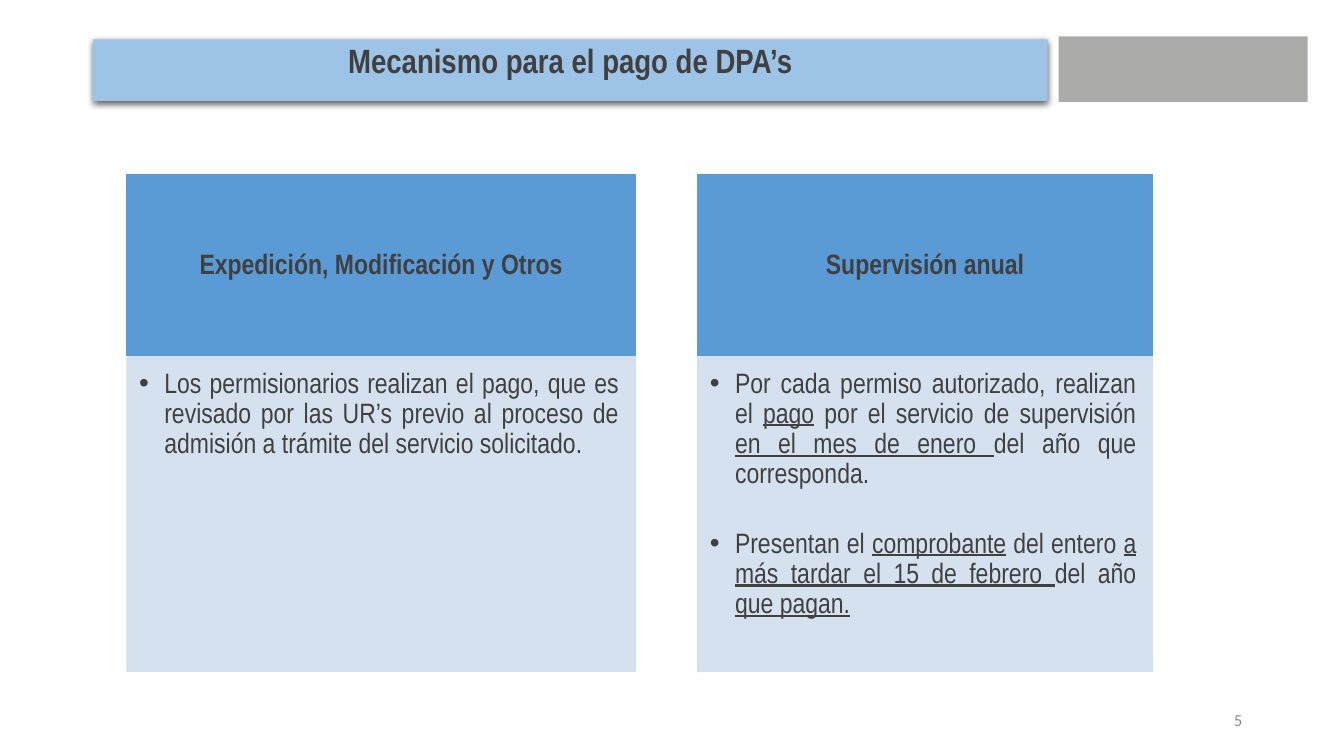
from lxml.etree import SubElement
from pptx import Presentation
from pptx.dml.color import RGBColor
from pptx.enum.shapes import MSO_SHAPE
from pptx.enum.text import MSO_ANCHOR, MSO_AUTO_SIZE, PP_ALIGN
from pptx.oxml.ns import qn
from pptx.util import Inches, Pt

COLORS = {
    "text": "404040", "number": "8C8C8C", "banner": "9DC3E6",
    "header": "5B9BD5", "panel": "D2DEEF", "logo": "AAAAA9",
}
COLUMNS = [
    (1.26, 5.04, "Expedición, Modificación y Otros", [
        "Los permisionarios realizan el pago, que es revisado por las UR’s "
        "previo al proceso de admisión a trámite del servicio solicitado.",
    ]),
    (6.92, 4.51, "Supervisión anual", [
        "Por cada permiso autorizado, realizan el _pago_ por el servicio de "
        "supervisión _en el mes de enero _del año que corresponda.",
        "Presentan el _comprobante_ del entero _a más tardar el 15 de febrero "
        "_del año _que pagan._",
    ]),
]


def rgb(name):
    return RGBColor.from_string(COLORS[name])


def place(sp, left, top, width, height):
    sp.left, sp.top = Inches(left), Inches(top)
    sp.width, sp.height = Inches(width), Inches(height)


def paint(sp, color, outlined=False, alpha=None):
    sp.fill.solid()
    sp.fill.fore_color.rgb = rgb(color)
    if outlined:
        sp.line.color.rgb = rgb(color)
        sp.line.width = Pt(1)
    else:
        sp.line.fill.background()
    if alpha:
        for clr in sp._element.spPr.iter(qn("a:srgbClr")):
            SubElement(clr, qn("a:alpha"), val=str(alpha * 1000))


def add_shadow(sp):
    effects = SubElement(sp._element.spPr, qn("a:effectLst"))
    shadow = SubElement(effects, qn("a:outerShdw"), blurRad=str(Pt(4.5)),
                        dist=str(Pt(1.5)), dir="5400000", rotWithShape="0")
    clr = SubElement(shadow, qn("a:srgbClr"), val="000000")
    SubElement(clr, qn("a:alpha"), val="63000")


def add_bullet(p):
    pPr = p._p.get_or_add_pPr()
    pPr.set("marL", str(Inches(0.25)))
    pPr.set("indent", str(Inches(-0.25)))
    SubElement(pPr, qn("a:buFont"), typeface="Arial")
    SubElement(pPr, qn("a:buChar"), char="•")


def write(sp, *texts, size=20, font="Arial Narrow", color="text", bold=False,
          align=PP_ALIGN.CENTER, anchor=MSO_ANCHOR.MIDDLE, after=0,
          margins=(0.1, 0.05, 0.1, 0.05), bullets=False):
    tf = sp.text_frame
    tf.word_wrap, tf.auto_size = True, MSO_AUTO_SIZE.NONE
    tf.vertical_anchor = anchor
    (tf.margin_left, tf.margin_top,
     tf.margin_right, tf.margin_bottom) = map(Inches, margins)
    for i, text in enumerate(texts):
        p = tf.add_paragraph() if i else tf.paragraphs[0]
        p.alignment, p.line_spacing = align, 0.9
        p.space_before, p.space_after = Pt(0), Pt(after)
        if bullets:
            add_bullet(p)
        for j, part in enumerate(text.split("_")):
            if part:
                r = p.add_run()
                r.text = part
                r.font.name, r.font.size = font, Pt(size)
                r.font.bold, r.font.underline = bold, j % 2 == 1
                r.font.color.rgb = rgb(color)


def add_column(header, panel, left, width, title, items):
    place(header, left, 1.73, width, 1.8)
    paint(header, "header", outlined=True)
    write(header, title, bold=True, margins=(0.16, 0.09, 0.16, 0.09))
    place(panel, left, 3.54, width, 3.12)
    paint(panel, "panel", outlined=True, alpha=90)
    write(panel, *items, align=PP_ALIGN.JUSTIFY, anchor=MSO_ANCHOR.TOP,
          after=28, margins=(0.12, 0.12, 0.16, 0.17), bullets=True)


def add_logo_block(s):
    sp = s.shapes.add_shape(MSO_SHAPE.RECTANGLE, Inches(10.5), Inches(0.36),
                            Inches(2.47), Inches(0.65))
    sp.shadow.inherit = False
    paint(sp, "logo")


def add_number(s, number):
    sp = s.shapes.add_textbox(Inches(9.42), Inches(6.95), Inches(3), Inches(0.4))
    write(sp, number, size=12, font="Calibri", color="number",
          align=PP_ALIGN.RIGHT)


def main():
    prs = Presentation()
    prs.slide_width, prs.slide_height = Inches(13.33), Inches(7.5)
    s = prs.slides.add_slide(prs.slide_layouts.get_by_name("Comparison"))
    title, *boxes = s.placeholders
    place(title, 0.92, 0.39, 9.47, 0.61)
    paint(title, "banner")
    add_shadow(title)
    write(title, "Mecanismo para el pago de DPA’s", size=24, bold=True,
          anchor=MSO_ANCHOR.TOP)
    for header, panel, column in zip(boxes[::2], boxes[1::2], COLUMNS):
        add_column(header, panel, *column)
    add_logo_block(s)
    add_number(s, "5")
    prs.save("out.pptx")


if __name__ == "__main__":
    main()
